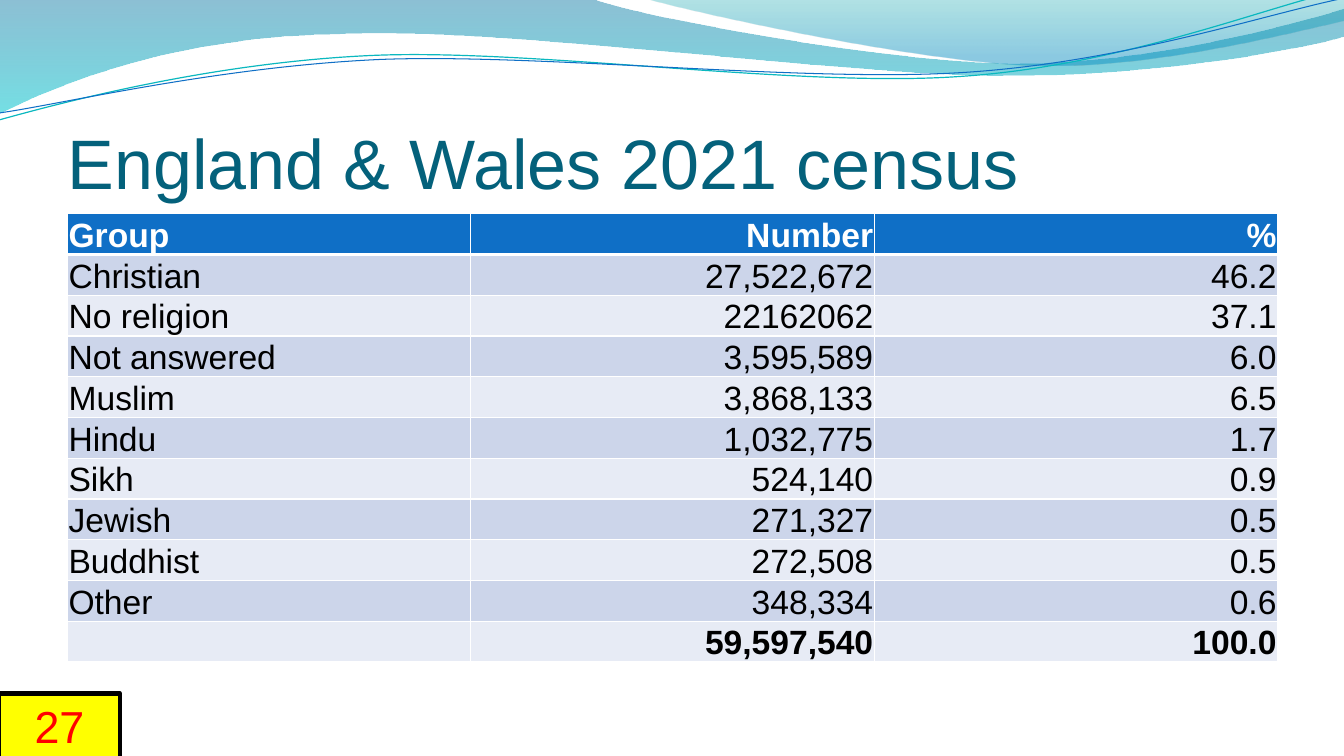
from dataclasses import dataclass
from typing import Optional

from lxml.etree import SubElement
from pptx import Presentation
from pptx.dml.color import RGBColor
from pptx.enum.shapes import MSO_SHAPE
from pptx.enum.text import MSO_ANCHOR, PP_ALIGN
from pptx.oxml.ns import qn
from pptx.util import Inches, Pt

COLORS = {
    "title": "04617B", "header": "0F6FC6", "odd": "CCD5EA", "even": "E7EBF5",
    "white": "FFFFFF", "black": "000000", "yellow": "FFFF00", "red": "FF0000",
    "wave_blue": "0074A1", "wave_cyan": "00C6CF",
    "crest_teal": "00A1A9", "crest_blue": "008BBF", "line_teal": "0AB8BF",
}
FONT = "Arial"


@dataclass
class Stop:
    position: float
    color: str
    opacity: int


@dataclass
class Wave:
    """Segments hold one point for a straight line, three for a Bezier curve."""
    start: tuple
    segments: list
    stops: Optional[list] = None
    line: Optional[str] = None
    width: float = 0


WAVES = [
    Wave((0, 0), [
        [(5.87, -0.01)],
        [(6.34, 0.17), (8.85, 0.63), (10.11, 0.63)],
        [(11.38, 0.63), (12.78, 0.26), (13.33, 0.09)],
        [(13.35, 0.36)],
        [(13.11, 0.44), (11.6, 0.76), (9.94, 0.75)],
        [(8.29, 0.75), (5.09, 0.28), (3.43, 0.34)],
        [(1.72, 0.36), (0.61, 0.83), (-0.01, 1.13)],
        [(0, 0)],
    ], stops=[Stop(0, "wave_blue", 45), Stop(1, "wave_cyan", 55)]),
    Wave((6.39, -0.01), [
        [(6.79, 0.11), (9.09, 0.62), (10.25, 0.65)],
        [(11.41, 0.69), (12.82, 0.32), (13.33, 0.21)],
        [(13.33, 0)],
        [(6.39, -0.01)],
    ], stops=[Stop(0, "crest_teal", 30), Stop(0.8, "crest_blue", 45)]),
    Wave((-0.01, 1.19), [
        [(0.64, 1.01), (2.11, 0.62), (3.69, 0.55)],
        [(5.27, 0.48), (7.9, 0.87), (9.5, 0.76)],
        [(11.1, 0.66), (12.52, 0.08), (13.31, -0.1)],
    ], line="line_teal", width=0.85),
    Wave((0, 1.12), [
        [(0.63, 1.03), (2.18, 0.66), (3.78, 0.59)],
        [(5.37, 0.53), (7.96, 0.82), (9.55, 0.72)],
        [(11.15, 0.62), (12.55, 0.14), (13.34, -0.02)],
    ], line="header", width=0.75),
]

CENSUS = [
    ("Group", "Number", "%"),
    ("Christian", "27,522,672", "46.2"),
    ("No religion", "22162062", "37.1"),
    ("Not answered", "3,595,589", "6.0"),
    ("Muslim", "3,868,133", "6.5"),
    ("Hindu", "1,032,775", "1.7"),
    ("Sikh", "524,140", "0.9"),
    ("Jewish", "271,327", "0.5"),
    ("Buddhist", "272,508", "0.5"),
    ("Other", "348,334", "0.6"),
    ("", "59,597,540", "100.0"),
]


def rgb(name: str) -> RGBColor:
    return RGBColor.from_string(COLORS[name])


def add_run(paragraph, text: str, size: float, color: str, bold: bool = False) -> None:
    run = paragraph.add_run()
    run.text = text
    run.font.name = FONT
    run.font.size = Pt(size)
    run.font.bold = bold
    run.font.color.rgb = rgb(color)


def bend_segments(shape, segments: list) -> None:
    """Join each run of three line points into one cubic Bezier curve."""
    lines = iter(list(shape.element.iter(qn("a:lnTo"))))
    for segment in segments:
        parts = [next(lines) for _ in segment]
        if len(parts) == 3:
            outline = parts[0].getparent()
            curve = SubElement(outline, qn("a:cubicBezTo"))
            outline.replace(parts[0], curve)
            for part in parts:
                curve.append(part[0])
            for part in parts[1:]:
                outline.remove(part)


def add_wave(slide, wave: Wave) -> None:
    builder = slide.shapes.build_freeform(*map(Inches, wave.start))
    points = [tuple(map(Inches, point)) for segment in wave.segments for point in segment]
    builder.add_line_segments(points, close=wave.stops is not None)
    shape = builder.convert_to_shape()
    bend_segments(shape, wave.segments)
    shape.shadow.inherit = False
    if wave.line:
        shape.fill.background()
        shape.line.color.rgb = rgb(wave.line)
        shape.line.width = Pt(wave.width)
        return
    shape.line.fill.background()
    shape.fill.gradient()
    shape.fill.gradient_angle = 270
    for gradient_stop, stop in zip(shape.fill.gradient_stops, wave.stops):
        gradient_stop.position = stop.position
        gradient_stop.color.rgb = rgb(stop.color)
    for color, stop in zip(shape.element.spPr.iter(qn("a:srgbClr")), wave.stops):
        SubElement(color, qn("a:alpha"), val=str(stop.opacity * 1000))


def add_borders(cell, row: int) -> None:
    properties = cell._tc.get_or_add_tcPr()
    for edge in ("lnL", "lnR", "lnT", "lnB"):
        # The header's thick lower border also serves the first body row
        if row == 1 and edge == "lnT":
            continue
        width = Pt(3 if row == 0 and edge == "lnB" else 1)
        border = SubElement(properties, qn(f"a:{edge}"), w=str(width))
        fill = SubElement(border, qn("a:solidFill"))
        SubElement(fill, qn("a:srgbClr"), val=COLORS["white"])


def add_census_table(slide) -> None:
    last = len(CENSUS) - 1
    table = slide.shapes.add_table(len(CENSUS), 3, Inches(0.67), Inches(2.12),
                                   Inches(12), Inches(4.45)).table
    for row, values in enumerate(CENSUS):
        background = "header" if row == 0 else "odd" if row % 2 else "even"
        for column, text in enumerate(values):
            cell = table.cell(row, column)
            cell.margin_left = cell.margin_right = cell.margin_top = Inches(0.01)
            cell.margin_bottom = 0
            cell.vertical_anchor = MSO_ANCHOR.BOTTOM
            add_borders(cell, row)
            cell.fill.solid()
            cell.fill.fore_color.rgb = rgb(background)
            paragraph = cell.text_frame.paragraphs[0]
            paragraph.alignment = PP_ALIGN.RIGHT if column else PP_ALIGN.LEFT
            if text:
                add_run(paragraph, text, 24, "black" if row else "white", row in (0, last))


def format_title(slide) -> None:
    title = slide.shapes.title
    title.left, title.top = Inches(0.67), Inches(0.77)
    title.width, title.height = Inches(12), Inches(1.25)
    frame = title.text_frame
    frame.margin_left = frame.margin_right = frame.margin_bottom = 0
    frame.margin_top = Inches(0.05)
    frame.vertical_anchor = MSO_ANCHOR.BOTTOM
    frame.paragraphs[0].alignment = PP_ALIGN.LEFT
    add_run(frame.paragraphs[0], "England & Wales 2021 census", 50, "title")
    # Bring the title in front of the waves
    slide.shapes.element.append(title.element)


def add_page_number(slide) -> None:
    box = slide.shapes.add_shape(MSO_SHAPE.RECTANGLE, Inches(-0.01), Inches(6.88),
                                 Inches(1.2), Inches(0.64))
    box.shadow.inherit = False
    box.fill.solid()
    box.fill.fore_color.rgb = rgb("yellow")
    box.line.color.rgb = rgb("black")
    box.line.width = Pt(3)
    paragraph = box.text_frame.paragraphs[0]
    paragraph.alignment = PP_ALIGN.CENTER
    add_run(paragraph, "27", 32, "red")


def main() -> None:
    presentation = Presentation()
    presentation.slide_width, presentation.slide_height = Inches(13.33), Inches(7.5)
    slide = presentation.slides.add_slide(presentation.slide_layouts[5])
    # Header waves
    for wave in WAVES:
        add_wave(slide, wave)
    # Content
    format_title(slide)
    add_census_table(slide)
    add_page_number(slide)
    presentation.save("out.pptx")


if __name__ == "__main__":
    main()
